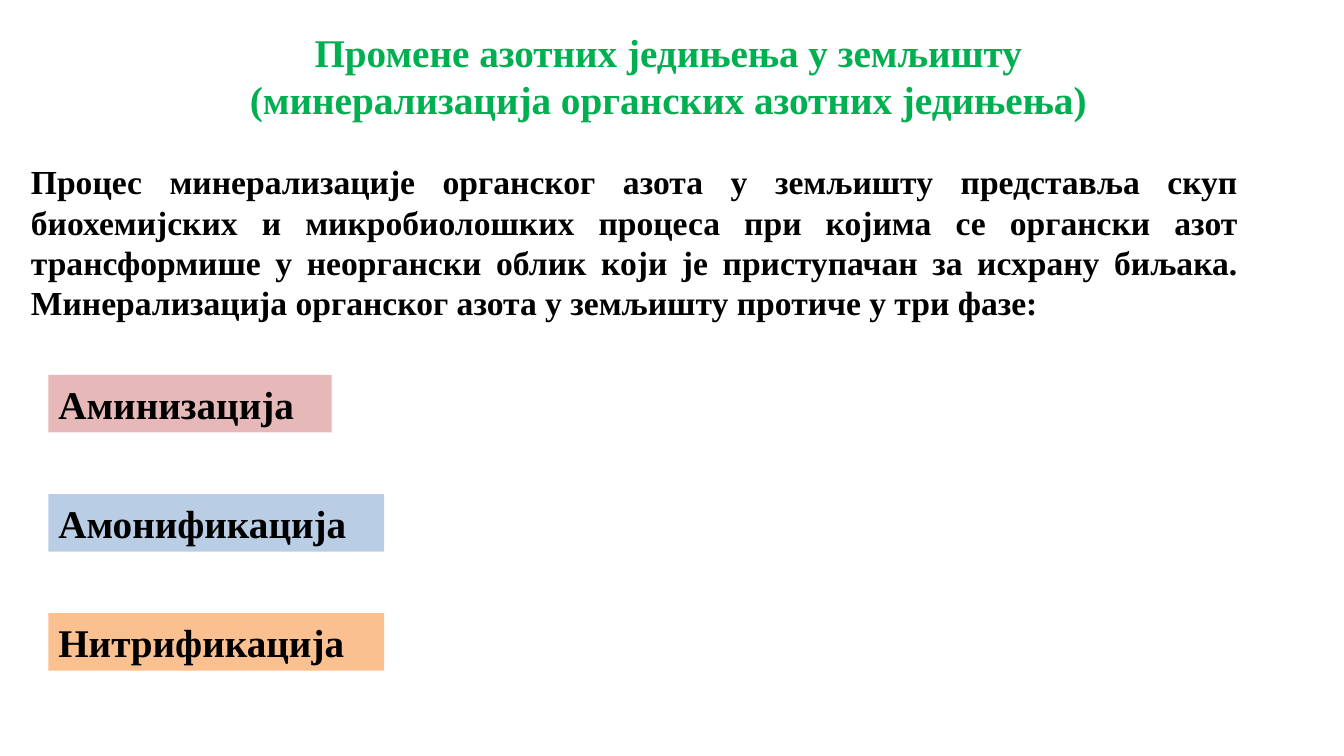
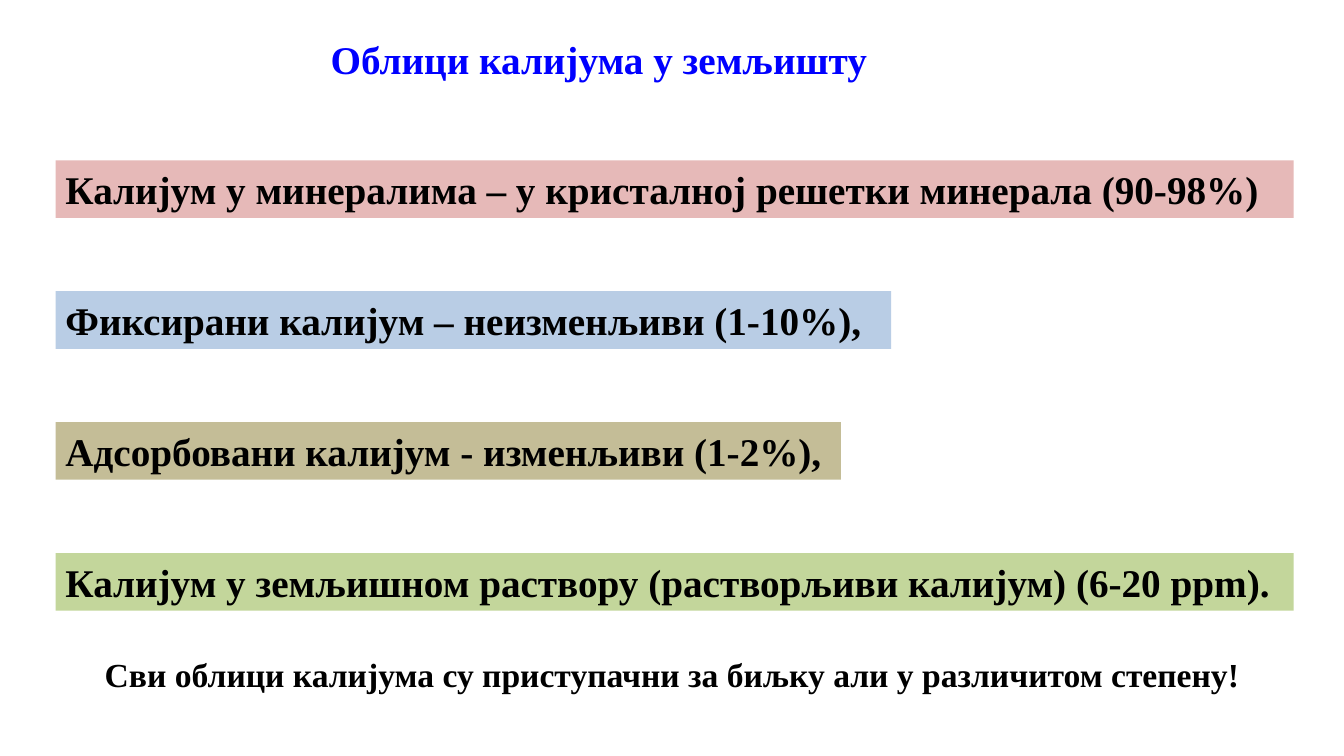
from typing import NamedTuple

from pptx import Presentation
from pptx.dml.color import RGBColor
from pptx.enum.shapes import MSO_SHAPE
from pptx.enum.text import MSO_ANCHOR, MSO_AUTO_SIZE, PP_ALIGN
from pptx.slide import Slide
from pptx.text.text import TextFrame
from pptx.util import Cm, Pt

RECT = MSO_SHAPE.RECTANGLE
TOP = MSO_ANCHOR.TOP
FIXED = MSO_AUTO_SIZE.NONE
LEFT, CENTER, JUSTIFY = PP_ALIGN.LEFT, PP_ALIGN.CENTER, PP_ALIGN.JUSTIFY

BLACK = RGBColor(0x00, 0x00, 0x00)
GREEN = RGBColor(0x00, 0xB0, 0x50)
BLUE = RGBColor(0x00, 0x00, 0xFF)
ROSE = RGBColor(0xE6, 0xB9, 0xB8)
SKY = RGBColor(0xB9, 0xCD, 0xE5)
PEACH = RGBColor(0xFA, 0xC0, 0x90)
SAND = RGBColor(0xC4, 0xBD, 0x97)
LIME = RGBColor(0xC3, 0xD6, 0x9B)

FONT = "Times New Roman"
LARGE, SMALL = 28, 24
BAND_HEIGHT = 1.45


class Box(NamedTuple):
    left: float
    top: float
    width: float
    height: float

    def place(self) -> tuple[Cm, Cm, Cm, Cm]:
        return Cm(self.left), Cm(self.top), Cm(self.width), Cm(self.height)


class Band(NamedTuple):
    text: str
    width: float
    fill: RGBColor


PHASES = [
    Band("Аминизација", 7.14, ROSE),
    Band("Амонификација", 8.46, SKY),
    Band("Нитрификација", 8.46, PEACH),
]
FORMS = [
    Band("Калијум у минералима – у кристалној решетки минерала (90-98%)", 31.2, ROSE),
    Band("Фиксирани калијум – неизменљиви (1-10%),", 21.06, SKY),
    Band("Адсорбовани калијум - изменљиви (1-2%),", 19.79, SAND),
    Band("Калијум у земљишном раствору (растворљиви калијум) (6-20 ppm).", 31.2, LIME),
]


def write(frame: TextFrame, text: str, size: int = LARGE,
          color: RGBColor = BLACK, align: PP_ALIGN = LEFT) -> None:
    frame.word_wrap = True
    frame.auto_size = FIXED
    frame.vertical_anchor = TOP
    frame.text = text
    line = frame.paragraphs[0]
    line.alignment = align
    line.font.name = FONT
    line.font.size = Pt(size)
    line.font.bold = True
    line.font.color.rgb = color


def add_title(slide: Slide, box: Box, text: str, color: RGBColor,
              align: PP_ALIGN) -> None:
    title = slide.shapes.title
    title.left, title.top, title.width, title.height = box.place()
    write(title.text_frame, text, color=color, align=align)


def add_text(slide: Slide, box: Box, text: str, align: PP_ALIGN = LEFT) -> None:
    shape = slide.shapes.add_textbox(*box.place())
    write(shape.text_frame, text, SMALL, align=align)


def add_bands(slide: Slide, bands: list[Band], left: float, top: float,
              step: float) -> None:
    for index, band in enumerate(bands):
        box = Box(left, top + index * step, band.width, BAND_HEIGHT)
        shape = slide.shapes.add_shape(RECT, *box.place())
        shape.shadow.inherit = False
        shape.fill.solid()
        shape.fill.fore_color.rgb = band.fill
        shape.line.fill.background()
        write(shape.text_frame, band.text)


def main() -> None:
    deck = Presentation()
    deck.slide_width, deck.slide_height = Cm(33.87), Cm(19.05)
    layout = deck.slide_layouts.get_by_name("Title Only")

    slide = deck.slides.add_slide(layout)
    add_title(slide, Box(4.8, 0.58, 24.08, 2.64),
              "Промене азотних једињења у земљишту "
              "(минерализација органских азотних једињења)", GREEN, CENTER)
    add_text(slide, Box(0.53, 3.94, 30.91, 4.37),
             "Процес минерализацијe органског азота у земљишту представља скуп "
             "биохемијских и микробиолошких процеса при којима се органски азот "
             "трансформише у неоргански облик који је приступачан за исхрану биљака. "
             "Минерализација органског азота у земљишту протиче у три фазе:", JUSTIFY)
    add_bands(slide, PHASES, 1.22, 9.45, 3)

    slide = deck.slides.add_slide(layout)
    add_title(slide, Box(8.08, 0.76, 14.17, BAND_HEIGHT),
              "Облици калијума у земљишту", BLUE, LEFT)
    add_bands(slide, FORMS, 1.4, 4.04, 3.3)
    add_text(slide, Box(2.39, 16.36, 29.72, 1.27),
             "Сви облици калијума су приступачни за биљку али у различитом степену!")

    deck.save("out.pptx")


if __name__ == "__main__":
    main()
